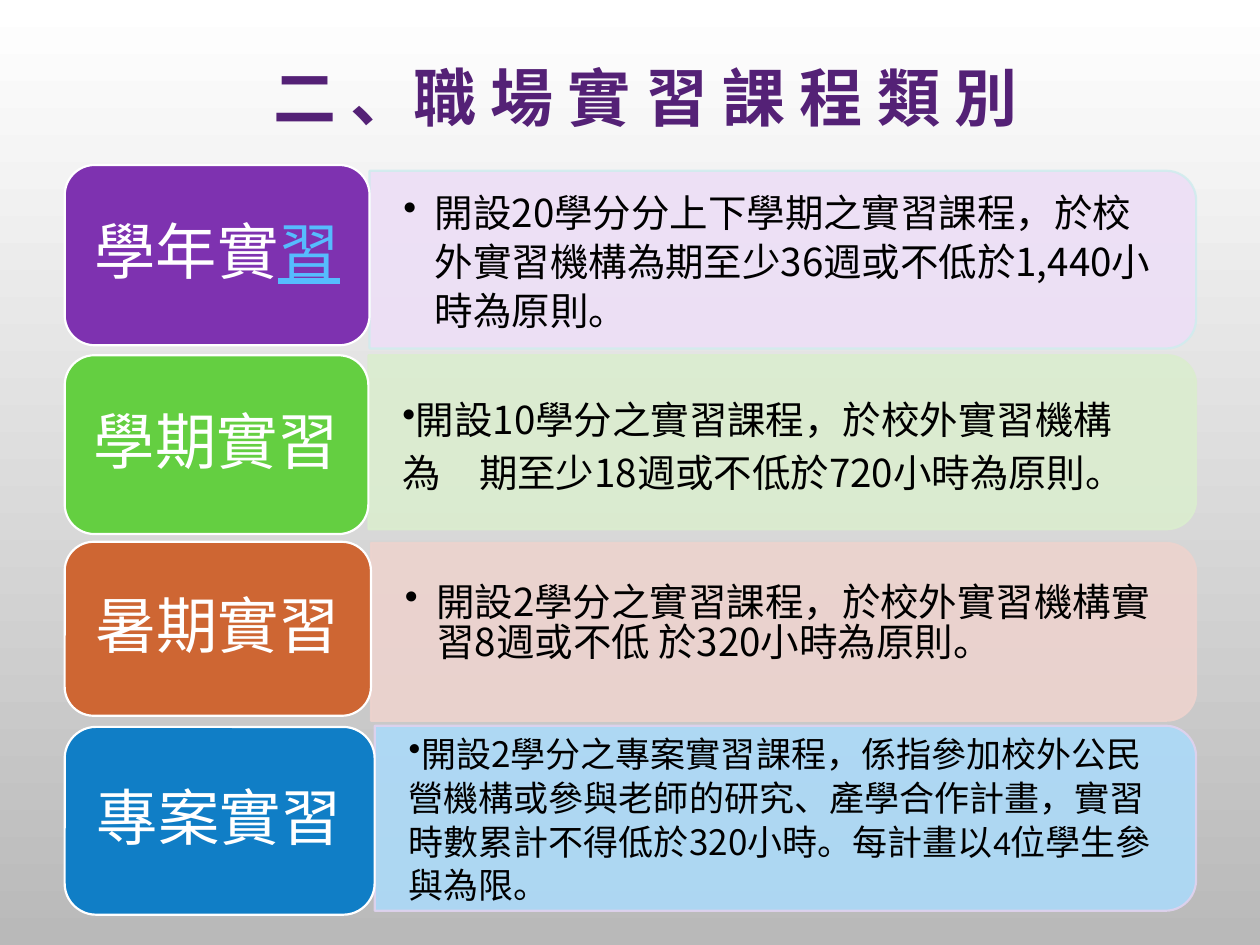
from dataclasses import dataclass

from lxml.etree import SubElement
from pptx import Presentation
from pptx.dml.color import RGBColor
from pptx.enum.shapes import MSO_SHAPE
from pptx.enum.text import MSO_ANCHOR, PP_ALIGN
from pptx.oxml.ns import qn
from pptx.util import Pt


@dataclass(frozen=True)
class Theme:
    sans: str = "Noto Sans CJK SC"
    latin: str = "Calibri"
    title: str = "542176"
    body: str = "000000"
    white: str = "FFFFFF"
    link: str = "56BCFE"
    background: tuple = ("FFFFFF", "B9B9B9")
    title_size: int = 36
    label_size: int = 35
    body_size: int = 22
    small_size: int = 20
    outline: float = 1.25
    panel_opacity: int = 90


def add_text(paragraph, text, *, size, color, font, bold=False, underline=False):
    run = paragraph.add_run()
    run.text = text
    run.font.size = Pt(size)
    run.font.bold = bold
    run.font.underline = underline
    run.font.color.rgb = RGBColor.from_string(color)
    run.font.name = font
    SubElement(run.font._element, qn("a:ea")).set("typeface", font)


class SlideBuilder:
    def __init__(self, slide, theme):
        self.slide = slide
        self.theme = theme

    def background(self):
        fill = self.slide.background.fill
        fill.gradient()
        fill.gradient_angle = 270
        for stop, color, position in zip(
            fill.gradient_stops, self.theme.background, (0, 1)
        ):
            stop.color.rgb = RGBColor.from_string(color)
            stop.position = position

    def frame(self, shape, margins):
        frame = shape.text_frame
        frame.word_wrap = True
        frame.vertical_anchor = MSO_ANCHOR.MIDDLE
        (frame.margin_left, frame.margin_top,
         frame.margin_right, frame.margin_bottom) = map(Pt, margins)
        return frame.paragraphs[0]

    def block(self, kind, left, top, width, height, fill, line):
        shape = self.slide.shapes.add_shape(
            kind, Pt(left), Pt(top), Pt(width), Pt(height)
        )
        shape.shadow.inherit = False
        shape.fill.solid()
        shape.fill.fore_color.rgb = RGBColor.from_string(fill)
        shape.line.color.rgb = RGBColor.from_string(line)
        shape.line.width = Pt(self.theme.outline)
        return shape

    def title(self, text, left, top, width, height):
        box = self.slide.shapes.add_textbox(
            Pt(left), Pt(top), Pt(width), Pt(height)
        )
        paragraph = self.frame(box, (7.2, 3.6, 7.2, 3.6))
        paragraph.alignment = PP_ALIGN.CENTER
        add_text(paragraph, text, size=self.theme.title_size,
                 color=self.theme.title, font=self.theme.sans, bold=True)

    def panel(self, left, top, width, height, fill, line):
        # A quarter turn puts the two rounded corners on the right
        shape = self.block(
            MSO_SHAPE.ROUND_2_SAME_RECTANGLE,
            left + (width - height) / 2, top + (height - width) / 2,
            height, width, fill, line,
        )
        shape.rotation = 90
        for color in shape._element.spPr.iter(qn("a:srgbClr")):
            SubElement(color, qn("a:alpha")).set(
                "val", str(self.theme.panel_opacity * 1000)
            )

    def description(self, runs, left, top, width, height, size, pitch, indent):
        box = self.slide.shapes.add_textbox(
            Pt(left), Pt(top), Pt(width), Pt(height)
        )
        paragraph = self.frame(box, (19.4, 0, 24.8, 0))
        properties = paragraph._p.get_or_add_pPr()
        properties.set("marL", str(Pt(indent)))
        properties.set("indent", str(-Pt(indent)))
        SubElement(properties, qn("a:buChar")).set("char", "•")
        paragraph.line_spacing = Pt(pitch)
        for text, font in runs:
            add_text(paragraph, text, size=size, color=self.theme.body, font=font)

    def label(self, text, linked, left, top, width, height, fill):
        shape = self.block(MSO_SHAPE.ROUNDED_RECTANGLE, left, top, width,
                           height, fill, self.theme.white)
        paragraph = self.frame(shape, (10, 5, 10, 5))
        paragraph.alignment = PP_ALIGN.CENTER
        paragraph.line_spacing = 0.9
        style = dict(size=self.theme.label_size, font=self.theme.latin)
        add_text(paragraph, text, color=self.theme.white, **style)
        if linked:
            add_text(paragraph, linked, color=self.theme.link,
                     underline=True, **style)


@dataclass(frozen=True)
class Course:
    name: str
    runs: tuple
    label_box: tuple  # top, width, height
    panel_box: tuple  # top, height
    colors: tuple  # label, panel, panel outline
    pitch: float
    size: int = Theme.body_size
    indent: int = 0
    text_shift: float = 0
    linked: str = ""


COURSES = (
    Course("學年實",
           (("開設20學分分上下學期之實習課程，於校外實習機構為期至少36週"
             "或不低於1,440小時為原則。", Theme.sans),),
           (94.3, 174.2, 103), (97.6, 101.5),
           ("7E32B0", "EDDFF6", "D1ECEE"), 28, indent=18, linked="習"),
    Course("學期實習",
           (("開設10學分之實習課程，於校外實習機構為　期至少18週"
             "或不低於720小時為原則。", Theme.sans),),
           (203, 173.5, 102.2), (203, 99.4),
           ("64CF41", "DBEDCF", "DBEDCF"), 30),
    Course("暑期實習",
           (("開設2學分之實習課程，於校外實習機構實習8週或不低 "
             "於320小時為原則。", Theme.sans),),
           (309.6, 175, 99.4), (310.3, 101.5),
           ("CE6633", "EDD3CE", "EDD3CE"), 23, indent=18, text_shift=-4.5),
    Course("專案實習",
           (("開設2學分之專案實習課程，係指參加校外公民營機構或參與老師的研究、"
             "產學合作計畫，實習時數累計不得低於320小時", Theme.sans),
            ("。每計畫以4位學生參與為限。", Theme.latin)),
           (415.4, 177.1, 107.3), (414.7, 105.8),
           ("107EC6", "ACDAF8", "E0D2EE"), 25, size=Theme.small_size),
)
LABEL_LEFT = 37
PANEL_RIGHT = 683.5


def main():
    presentation = Presentation()
    presentation.slide_width, presentation.slide_height = Pt(720), Pt(540)
    slide = presentation.slides.add_slide(presentation.slide_layouts[6])
    builder = SlideBuilder(slide, Theme())
    builder.background()

    # One row per course type: panel, description, label
    for course in COURSES:
        label_top, label_width, label_height = course.label_box
        panel_top, panel_height = course.panel_box
        label_fill, panel_fill, panel_line = course.colors
        panel_left = LABEL_LEFT + label_width
        panel_width = PANEL_RIGHT - panel_left
        builder.panel(panel_left, panel_top, panel_width, panel_height,
                      panel_fill, panel_line)
        builder.description(course.runs, panel_left,
                            panel_top + course.text_shift, panel_width,
                            panel_height, course.size, course.pitch,
                            course.indent)
        builder.label(course.name, course.linked, LABEL_LEFT, label_top,
                      label_width, label_height, label_fill)

    # Heading
    builder.title("二 、職 場 實 習 課 程 類 別", 99.4, 31.7, 538.6, 46.8)
    presentation.save("out.pptx")


if __name__ == "__main__":
    main()
